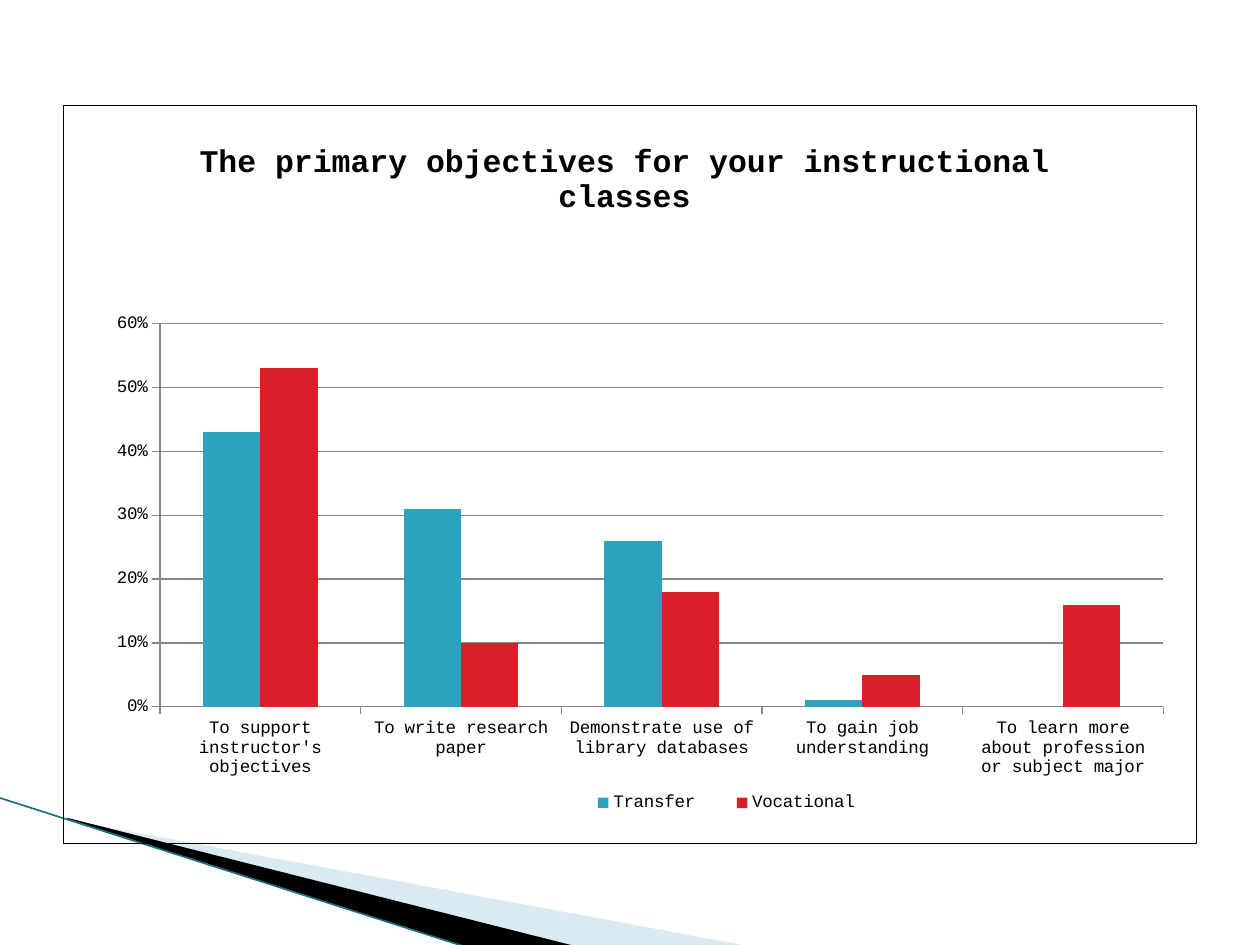
from pptx import Presentation
from pptx.chart.data import CategoryChartData
from pptx.dml.color import RGBColor
from pptx.enum.chart import XL_CHART_TYPE, XL_LEGEND_POSITION, XL_TICK_MARK
from pptx.enum.shapes import MSO_CONNECTOR
from pptx.oxml import parse_xml
from pptx.oxml.ns import nsdecls, qn
from pptx.util import Inches, Pt
from lxml.etree import SubElement

COLORS = {
    "black": "000000",
    "grid": "878787",
    "swoosh": "A0CBDC",
    "edge": "1B6F85",
    "transfer": "2DA2BF",
    "vocational": "DA1F28",
}
FONT = "Courier New"
TITLE = "The primary objectives for your instructional classes"
CATEGORIES = [
    "To support instructor's objectives",
    "To write research paper",
    "Demonstrate use of library databases",
    "To gain job understanding",
    "To learn more about profession or subject major",
]
SERIES = [
    ("Transfer", "transfer", (0.43, 0.31, 0.26, 0.01, 0)),
    ("Vocational", "vocational", (0.53, 0.1, 0.18, 0.05, 0.16)),
]
SWOOSHES = [
    ("swoosh", 40, [(0.55, 6.51), (5.95, 7.51), (4.56, 7.51), (0.55, 6.5)]),
    ("black", 100, [(0.53, 6.49), (4.57, 7.51), (3.72, 7.52), (0.54, 6.5)]),
]
EDGE = (-0.01, 6.33, 3.71, 7.52)
CHART_BOX = (0.5, 0.83, 9, 5.87)
PLOT_LAYOUT = {"x": 0.085, "y": 0.296, "w": 0.886, "h": 0.519}
TITLE_LAYOUT = {"x": 0.115, "y": 0.043}
LEGEND_LAYOUT = {"x": 0.44, "y": 0.92, "w": 0.29, "h": 0.05}


def rgb(name):
    return RGBColor.from_string(COLORS[name])


def add_swoosh(slide, color, opacity, points):
    start, *others = [(Inches(x), Inches(y)) for x, y in points]
    builder = slide.shapes.build_freeform(*start)
    builder.add_line_segments(others, close=True)
    shape = builder.convert_to_shape()
    shape.shadow.inherit = False
    shape.fill.solid()
    shape.fill.fore_color.rgb = rgb(color)
    shape.line.fill.background()
    if opacity < 100:
        fill_color = shape._element.spPr.find(".//" + qn("a:srgbClr"))
        SubElement(fill_color, qn("a:alpha"), val=str(opacity * 1000))


def add_edge(slide):
    line = slide.shapes.add_connector(MSO_CONNECTOR.STRAIGHT, *map(Inches, EDGE))
    line.line.color.rgb = rgb("edge")
    line.line.width = Pt(0.95)
    SubElement(line._element.spPr, qn("a:effectLst"))


def set_layout(element, position, box, inner=False):
    for old_layout in element.findall(qn("c:layout")):
        element.remove(old_layout)
    target = '<c:layoutTarget val="inner"/>' if inner else ""
    modes = "".join(f'<c:{key}Mode val="edge"/>' for key in ("x", "y"))
    sizes = "".join(f'<c:{key} val="{value}"/>' for key, value in box.items())
    element.insert(position, parse_xml(
        f'<c:layout {nsdecls("c")}><c:manualLayout>{target}{modes}{sizes}'
        "</c:manualLayout></c:layout>"))


def add_border(chart):
    chart._chartSpace.find(qn("c:chart")).addnext(parse_xml(
        f'<c:spPr {nsdecls("c", "a")}><a:noFill/><a:ln w="{Pt(0.75)}"><a:solidFill>'
        f'<a:srgbClr val="{COLORS["black"]}"/></a:solidFill></a:ln></c:spPr>'))


def format_font(font, size, bold=False):
    font.name = FONT
    font.size = Pt(size)
    font.bold = bold
    font.color.rgb = rgb("black")


def format_line(line):
    line.color.rgb = rgb("grid")
    line.width = Pt(0.75)


def add_objectives_chart(slide):
    data = CategoryChartData(number_format="0%")
    data.categories = CATEGORIES
    for name, _, values in SERIES:
        data.add_series(name, values)
    chart = slide.shapes.add_chart(
        XL_CHART_TYPE.COLUMN_CLUSTERED, *map(Inches, CHART_BOX), data).chart
    format_font(chart.font, 10)
    add_border(chart)

    chart.has_title = True
    text_frame = chart.chart_title.text_frame
    text_frame.text = TITLE
    format_font(text_frame.paragraphs[0].runs[0].font, 18, bold=True)
    title = chart.chart_title._element
    set_layout(title, 1, TITLE_LAYOUT)
    title.find(qn("c:overlay")).set("val", "1")

    chart.has_legend = True
    chart.legend.position = XL_LEGEND_POSITION.BOTTOM
    chart.legend.include_in_layout = False
    set_layout(chart.legend._element, 1, LEGEND_LAYOUT)

    plot = chart.plots[0]
    plot.gap_width = 150
    plot.overlap = 0
    plot.vary_by_categories = False
    for series, (_, color, _) in zip(plot.series, SERIES):
        series.invert_if_negative = False
        series.format.fill.solid()
        series.format.fill.fore_color.rgb = rgb(color)
    set_layout(chart._chartSpace.find(".//" + qn("c:plotArea")), 0, PLOT_LAYOUT, inner=True)

    for axis in (chart.category_axis, chart.value_axis):
        axis.major_tick_mark = XL_TICK_MARK.OUTSIDE
        axis.minor_tick_mark = XL_TICK_MARK.NONE
        format_line(axis.format.line)
    value_axis = chart.value_axis
    value_axis.minimum_scale = 0
    value_axis.maximum_scale = 0.6
    value_axis.major_unit = 0.1
    value_axis.has_major_gridlines = True
    format_line(value_axis.major_gridlines.format.line)
    value_axis.tick_labels.number_format = "0%"
    value_axis.tick_labels.number_format_is_linked = False


def main():
    presentation = Presentation()
    presentation.slide_width = Inches(10)
    presentation.slide_height = Inches(7.5)
    slide = presentation.slides.add_slide(presentation.slide_layouts[6])
    for swoosh in SWOOSHES:
        add_swoosh(slide, *swoosh)
    add_edge(slide)
    add_objectives_chart(slide)
    presentation.save("out.pptx")


if __name__ == "__main__":
    main()
